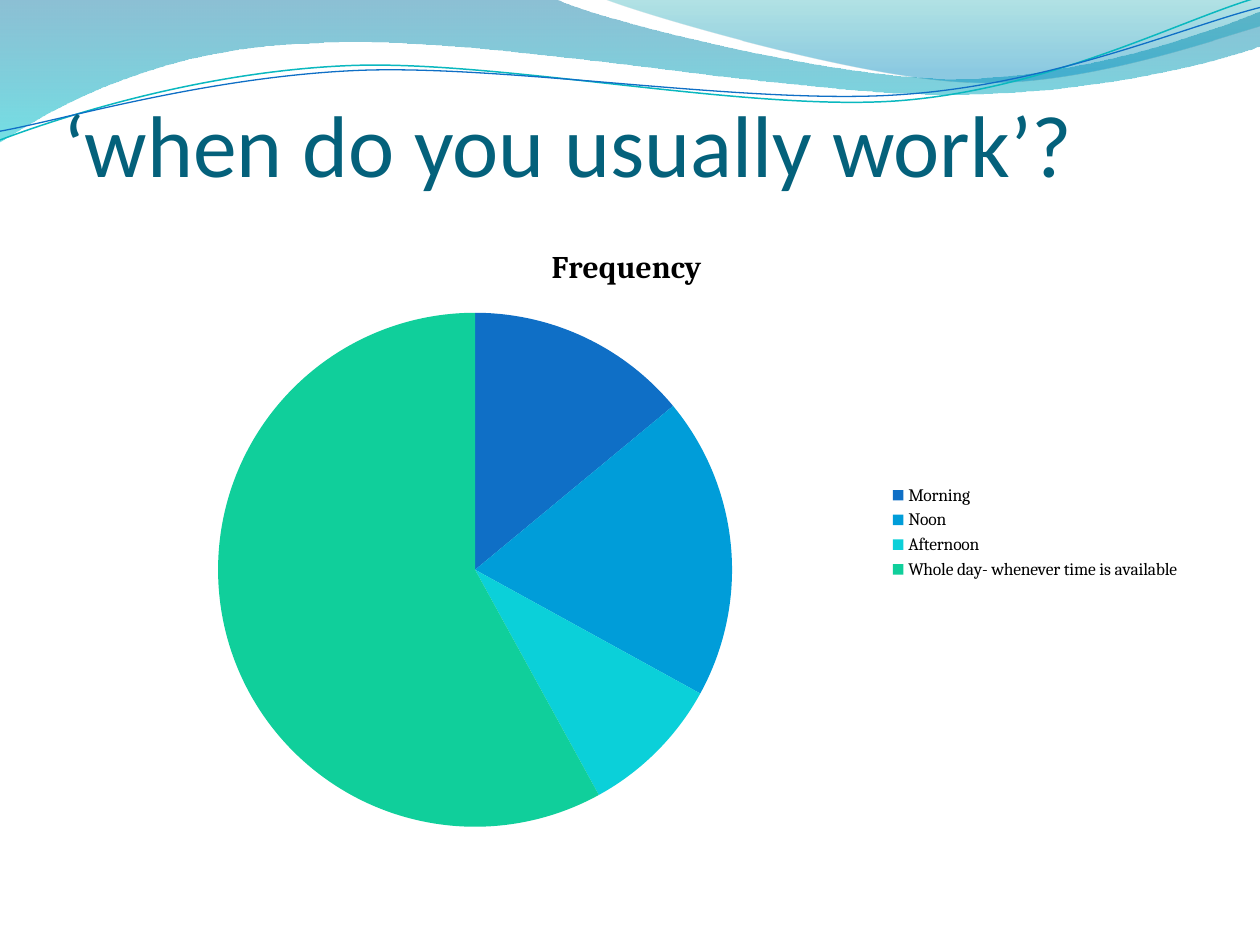
from pptx import Presentation
from pptx.chart.data import CategoryChartData
from pptx.dml.color import RGBColor
from pptx.enum.chart import XL_CHART_TYPE, XL_LEGEND_POSITION
from pptx.enum.text import MSO_ANCHOR, MSO_AUTO_SIZE, PP_ALIGN
from pptx.oxml import parse_xml
from pptx.oxml.ns import nsdecls
from pptx.util import Pt

PIE = XL_CHART_TYPE.PIE
RIGHT = XL_LEGEND_POSITION.RIGHT
BOTTOM = MSO_ANCHOR.BOTTOM
NO_FIT = MSO_AUTO_SIZE.NONE
LEFT = PP_ALIGN.LEFT
FINE = 100  # outline units to the point

# Wave outlines in points: a pair is a corner, a six is a Bézier curve.
BAND = [
    (0, 0), (317, -0.7), (343, 12, 478, 45, 546, 45),
    (614, 45, 690, 19, 720, 6.5), (720.7, 26),
    (708, 32, 626, 55, 537, 54), (448, 54, 275, 20, 185, 24.5),
    (93, 26, 33, 60, -0.7, 81.4),
]
CREST = [
    (345, -0.7), (366, 8, 491, 45, 554, 47),
    (616, 50, 692, 23, 720, 15), (720, 0),
]
TEAL = [
    (0, 80), (34.5, 67, 114, 41, 199.5, 37.5),
    (284.5, 34, 427, 64, 513.5, 57.6), (600, 51, 675.5, 11, 718.6, -1.4),
]
BLUE = [
    (0, 75), (34, 69, 118, 44, 204, 40.3),
    (290, 36.7, 430, 60.5, 516, 54), (602, 48, 677.5, 15, 720, 4.3),
]
# The labels end in a space, which counts in the legend's width.
SLICES = [
    ("Morning ", 14, "0F6FC6"),
    ("Noon ", 19, "009DD9"),
    ("Afternoon ", 9, "0BD0D9"),
    ("Whole day- whenever time is available ", 58, "10CF9B"),
]


def color(code):
    return RGBColor.from_string(code)


def style(item, **values):
    for name, value in values.items():
        setattr(item, name, value)


def outline(slide, route, close):
    """Build a freeform, then join each curve's three lines into a Bézier."""
    points = [(part[i] * FINE, part[i + 1] * FINE)
              for part in route for i in range(0, len(part), 2)]
    pen = slide.shapes.build_freeform(*points[0], scale=Pt(1) / FINE)
    pen.add_line_segments(points[1:], close=close)
    shape = pen.convert_to_shape()
    shape.shadow.inherit = False
    lines = iter(shape.element.spPr.findall(".//{*}lnTo"))
    for part in route[1:]:
        first = next(lines)
        if len(part) == 2:
            continue
        curve = parse_xml(f'<a:cubicBezTo {nsdecls("a")}/>')
        first.addprevious(curve)
        for line in (first, next(lines), next(lines)):
            curve.append(line[0])
            line.getparent().remove(line)
    return shape


def add_wave(slide, route, stops):
    """Draw a filled wave; each stop is position, colour and opacity."""
    shape = outline(slide, route, True)
    shape.line.fill.background()
    shape.fill.gradient()
    shape.fill.gradient_angle = 270
    for stop, (place, code, _) in zip(shape.fill.gradient_stops, stops):
        stop.position = place
        stop.color.rgb = color(code)
    tints = shape.element.spPr.findall(".//{*}srgbClr")
    for tint, (_, _, alpha) in zip(tints, stops):
        tint.append(parse_xml(
            f'<a:alpha {nsdecls("a")} val="{alpha * 1000}"/>'))


def add_curve(slide, route, code, width):
    shape = outline(slide, route, False)
    shape.fill.background()
    shape.line.color.rgb = color(code)
    shape.line.width = Pt(width)


def add_waves(slide):
    add_wave(slide, BAND, [(0, "0074A1", 45), (1, "00C6CF", 55)])
    add_wave(slide, CREST, [(0, "00A1A9", 30), (0.8, "008BBF", 45)])
    add_curve(slide, TEAL, "0AB8BF", 0.85)
    add_curve(slide, BLUE, "0F6FC6", 0.75)


def set_title(slide, box, text):
    title = slide.shapes.title
    title.left, title.top, title.width, title.height = map(Pt, box)
    frame = title.text_frame
    frame.text = text
    style(frame, auto_size=NO_FIT, word_wrap=True, vertical_anchor=BOTTOM,
          margin_left=0, margin_right=0, margin_top=Pt(3.6), margin_bottom=0)
    line = frame.paragraphs[0]
    line.alignment = LEFT
    font = line.runs[0].font
    style(font, name="Calibri", size=Pt(50))
    font.color.rgb = color("04617B")
    # Bring the title in front of the waves.
    title.element.getparent().append(title.element)


def add_pie(slide, box, name):
    data = CategoryChartData()
    data.categories = [label for label, _, _ in SLICES]
    data.add_series(name, [value for _, value, _ in SLICES])
    chart = slide.shapes.add_chart(PIE, *map(Pt, box), data).chart
    style(chart.font, name="Cambria", size=Pt(10))
    chart.font.color.rgb = color("000000")
    chart.has_title = True
    heading = chart.chart_title.text_frame
    heading.text = name
    font = heading.paragraphs[0].runs[0].font
    style(font, name="Cambria", size=Pt(18), bold=True)
    font.color.rgb = color("000000")
    chart.has_legend = True
    style(chart.legend, position=RIGHT, include_in_layout=False)
    plot = chart.plots[0]
    plot.vary_by_categories = True
    for index, (_, _, code) in enumerate(SLICES):
        fill = plot.series[0].points[index].format.fill
        fill.solid()
        fill.fore_color.rgb = color(code)


def main():
    deck = Presentation()
    deck.slide_width, deck.slide_height = Pt(720), Pt(540)
    slide = deck.slides.add_slide(deck.slide_layouts[5])
    add_waves(slide)
    set_title(slide, (36, 21.6, 648, 90), "‘when do you usually work’?")
    add_pie(slide, (36, 126, 648, 356.4), "Frequency ")
    deck.save("out.pptx")


if __name__ == "__main__":
    main()
